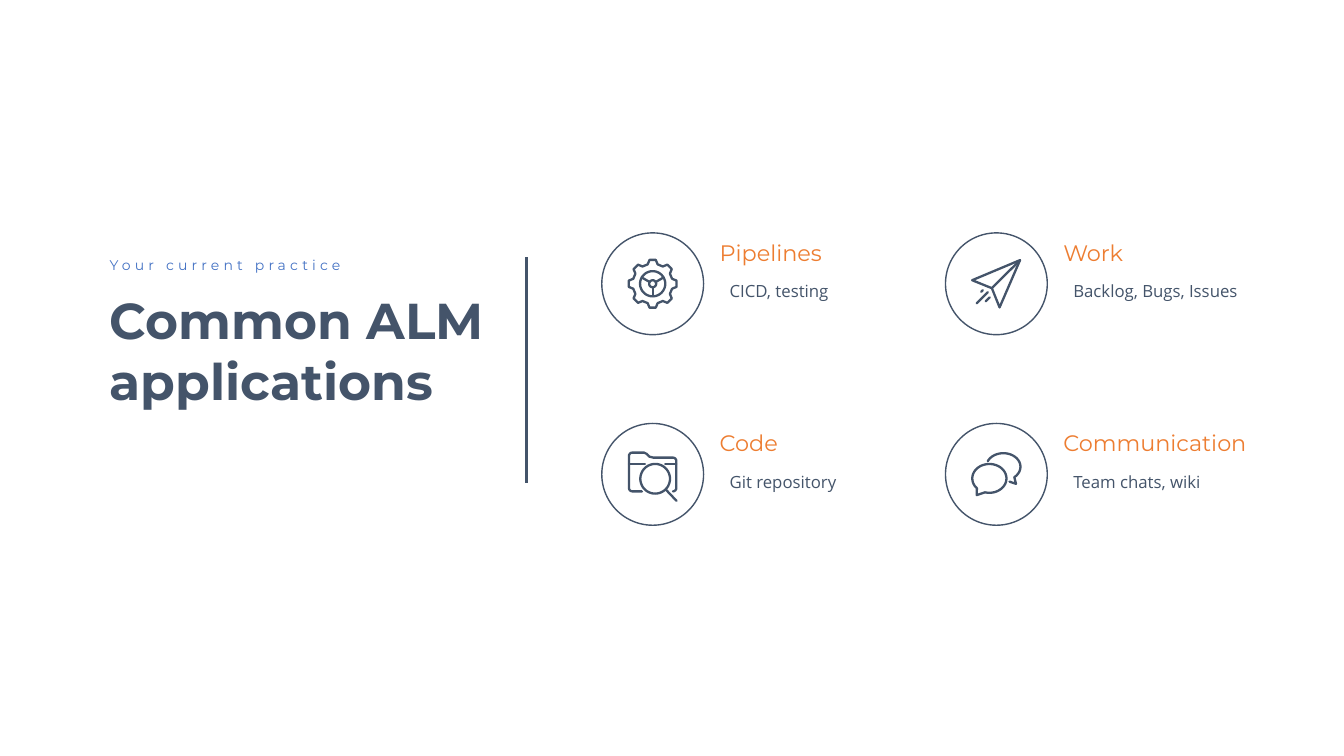
from dataclasses import dataclass
from math import cos, radians, sin
from typing import List, Optional, Tuple

from lxml.etree import SubElement
from pptx import Presentation
from pptx.dml.color import RGBColor
from pptx.enum.shapes import MSO_CONNECTOR, MSO_SHAPE
from pptx.enum.text import MSO_ANCHOR, MSO_AUTO_SIZE, PP_ALIGN
from pptx.oxml.ns import qn
from pptx.shapes.shapetree import GroupShapes
from pptx.slide import Slide
from pptx.util import Pt

SLATE = RGBColor(0x44, 0x54, 0x6A)
BLUE = RGBColor(0x44, 0x72, 0xC4)
ORANGE = RGBColor(0xED, 0x7D, 0x31)
HEADING_FONT = "Montserrat"
BODY_FONT = "Open Sans"

# Grid of the four applications, in points
FIRST_CENTER_X, FIRST_CENTER_Y = 466.2, 202.7
COLUMN_STEP, ROW_STEP = 245.5, 136.1
CIRCLE_SIZE = 72.7
ICON_STROKE = 1.65

Point = Tuple[float, float]


@dataclass
class Contour:
    points: List[Point]
    closed: bool = False


@dataclass
class TextStyle:
    font: str
    size: float
    color: RGBColor
    bold: bool = False
    letter_spacing: float = 0
    line_spacing: Optional[float] = None
    space_before: float = 0
    inset: Optional[float] = None
    grow: bool = True


@dataclass
class Application:
    heading: str
    detail: str
    icon: List[Contour]


TITLE = TextStyle(HEADING_FONT, 36, SLATE, bold=True)
KICKER = TextStyle(HEADING_FONT, 10, BLUE, letter_spacing=3)
HEADING = TextStyle(HEADING_FONT, 16, ORANGE, line_spacing=0.8, inset=0)
DETAIL = TextStyle(BODY_FONT, 12, SLATE, space_before=10, grow=False)


def polar(radius: float, angle: float) -> Point:
    return radius * cos(radians(angle)), radius * sin(radians(angle))


def arc(center: Point, radius_x: float, radius_y: float,
        start: float = 0, end: float = 360, steps: int = 48) -> List[Point]:
    angles = [radians(start + (end - start) * step / steps) for step in range(steps + 1)]
    return [(center[0] + radius_x * cos(angle), center[1] + radius_y * sin(angle))
            for angle in angles]


def gear_icon() -> List[Contour]:
    tooth = [(14.3, -14.5), (17.2, -7.5), (17.2, 7.5), (14.3, 14.5)]
    rim = [polar(radius, 45 * index + angle) for index in range(8) for radius, angle in tooth]
    rings = [Contour(arc((0, 0), radius, radius), True) for radius in (9, 2.5)]
    spokes = [Contour([polar(2.5, angle), polar(9, angle)]) for angle in (-30, 90, 210)]
    return [Contour(rim, True)] + rings + spokes


def plane_icon() -> List[Contour]:
    nose, fold = (16.9, -16.9), (-3.2, 3.2)
    return [
        Contour([nose, (-17.3, -2.5), fold, (2.3, 16.9)], True),
        Contour([nose, fold]),
        Contour([(-4.7, 9.7), (-7.6, 12.6)]),
        Contour([(-6.1, 6.1), (-14, 14)]),
        Contour([(-9.7, 4.7), (-10.8, 5.8)]),
    ]


def folder_icon() -> List[Contour]:
    outline = ([(-7.6, 12.2)] + arc((-14.5, 9.8), 2.4, 2.4, 90, 180, 6)
               + arc((-14.5, -13.1), 2.4, 2.4, 180, 270, 6)
               + [(-6.1, -15.5), (-4.3, -14.6), (-2.3, -12.6), (0.4, -11.9)]
               + arc((14.5, -9.5), 2.4, 2.4, 270, 360, 6)
               + arc((14.5, 9.8), 2.4, 2.4, 0, 90, 6))
    return [
        Contour(outline),
        Contour([(-16.9, -7.2), (-5.5, -7.2)]),
        Contour([(9, -7.2), (16.9, -7.2)]),
        Contour(arc((1.8, 3.2), 10.6, 10.6), True),
        Contour([(9.5, 11), (17.1, 19)]),
    ]


def chat_icon() -> List[Contour]:
    front = arc((-5, 2.9), 12.2, 10.3, 137, 465) + [(-14, 14.8)]
    back = arc((5, -5.4), 12.2, 9.7, 204, 410) + [(14, 6.8), (9.4, 5.2)]
    return [Contour(front, True), Contour(back)]


APPLICATIONS = [
    Application("Pipelines", "CICD, testing", gear_icon()),
    Application("Work", "Backlog, Bugs, Issues", plane_icon()),
    Application("Code", "Git repository", folder_icon()),
    Application("Communication", "Team chats, wiki", chat_icon()),
]


def add_text(shapes: GroupShapes, text: str, left: float, top: float,
             width: float, height: float, style: TextStyle) -> None:
    frame = shapes.add_textbox(Pt(left), Pt(top), Pt(width), Pt(height)).text_frame
    frame.word_wrap = True
    frame.vertical_anchor = MSO_ANCHOR.TOP
    frame.auto_size = MSO_AUTO_SIZE.SHAPE_TO_FIT_TEXT if style.grow else MSO_AUTO_SIZE.NONE
    if style.inset is not None:
        frame.margin_left = frame.margin_right = Pt(style.inset)
        frame.margin_top = frame.margin_bottom = Pt(style.inset)
    paragraph = frame.paragraphs[0]
    paragraph.alignment = PP_ALIGN.LEFT
    paragraph.space_before = Pt(style.space_before)
    if style.line_spacing:
        paragraph.line_spacing = style.line_spacing
    run = paragraph.add_run()
    run.text = text
    run.font.name = style.font
    run.font.size = Pt(style.size)
    run.font.bold = style.bold
    run.font.color.rgb = style.color
    if style.letter_spacing:
        run._r.get_or_add_rPr().set("spc", str(round(style.letter_spacing * 100)))


def add_icon(shapes: GroupShapes, contours: List[Contour], x: float, y: float) -> None:
    builder = None
    for contour in contours:
        points = [(Pt(x + dx), Pt(y + dy)) for dx, dy in contour.points]
        if builder is None:
            builder = shapes.build_freeform(*points[0])
        else:
            builder.move_to(*points[0])
        builder.add_line_segments(points[1:], close=contour.closed)
    icon = builder.convert_to_shape()
    icon.shadow.inherit = False
    icon.fill.background()
    icon.line.color.rgb = SLATE
    icon.line.width = Pt(ICON_STROKE)
    # Round caps and joins
    outline = icon.line._get_or_add_ln()
    outline.set("cap", "rnd")
    SubElement(outline, qn("a:round"))


def add_application(slide: Slide, application: Application, x: float, y: float) -> None:
    shapes = slide.shapes.add_group_shape().shapes
    add_icon(shapes, application.icon, x, y)
    add_text(shapes, application.heading, x + 47.9, y - 28.4, 138.2, 15.8, HEADING)
    add_text(shapes, application.detail, x + 47.9, y - 5.4, 149, 34.6, DETAIL)
    circle = shapes.add_shape(MSO_SHAPE.OVAL, Pt(x - CIRCLE_SIZE / 2), Pt(y - CIRCLE_SIZE / 2),
                              Pt(CIRCLE_SIZE), Pt(CIRCLE_SIZE))
    circle.shadow.inherit = False
    circle.fill.background()
    circle.line.color.rgb = SLATE
    circle.line.width = Pt(1)


def main() -> None:
    presentation = Presentation()
    presentation.slide_width, presentation.slide_height = Pt(960), Pt(540)
    slide = presentation.slides.add_slide(presentation.slide_layouts[6])

    # Title and divider
    add_text(slide.shapes, "Common ALM applications", 71.3, 203, 366.5, 94.3, TITLE)
    add_text(slide.shapes, "Your current practice", 71.3, 180, 352.8, 19.4, KICKER)
    divider = slide.shapes.add_connector(MSO_CONNECTOR.STRAIGHT,
                                         Pt(375.8), Pt(183.6), Pt(375.8), Pt(344.9))
    divider.line.color.rgb = SLATE
    divider.line.width = Pt(2)
    SubElement(divider._element.spPr, qn("a:effectLst"))

    # Two by two grid of applications
    for index, application in enumerate(APPLICATIONS):
        row, column = divmod(index, 2)
        add_application(slide, application, FIRST_CENTER_X + column * COLUMN_STEP,
                        FIRST_CENTER_Y + row * ROW_STEP)

    presentation.save("out.pptx")


if __name__ == "__main__":
    main()
